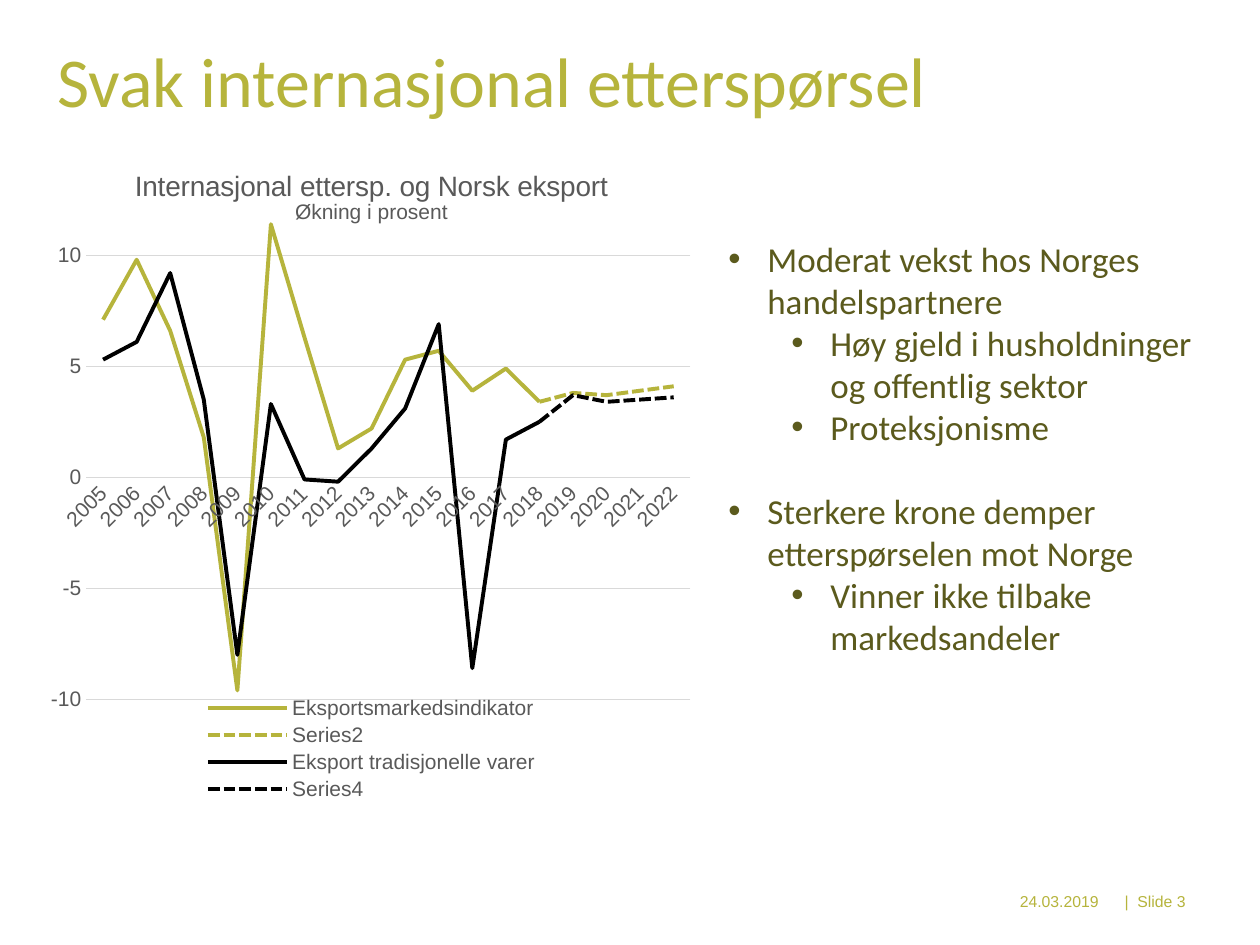
import pptx
import pptx.util
import pptx.chart.data
import pptx.dml.color
import pptx.enum.chart
import pptx.enum.dml
import pptx.enum.text
import pptx.oxml
import pptx.oxml.ns

Pt = pptx.util.Pt
RGB = pptx.dml.color.RGBColor
qn = pptx.oxml.ns.qn
ALIGN = pptx.enum.text.PP_ALIGN
ANCHOR = pptx.enum.text.MSO_ANCHOR

PX = 914400 / 126
OLIVE = RGB(0xB6, 0xB4, 0x3C)
DARK_OLIVE = RGB(0x5B, 0x5A, 0x1D)
GREY = RGB(0x59, 0x59, 0x59)
LIGHT_GREY = RGB(0xD9, 0xD9, 0xD9)
BLACK = RGB(0, 0, 0)

YEARS = [str(year) for year in range(2005, 2023)]
# Name, colour, index of first year, values, forecast (dashed)
SERIES = [
    ("Eksportsmarkedsindikator", OLIVE, 0,
     [7.1, 9.8, 6.6, 1.8, -9.6, 11.4, 6.3, 1.3, 2.2, 5.3, 5.7, 3.9, 4.9, 3.4], False),
    ("Series2", OLIVE, 13, [3.4, 3.8, 3.7, 3.9, 4.1], True),
    ("Eksport tradisjonelle varer", BLACK, 0,
     [5.3, 6.1, 9.2, 3.5, -8, 3.3, -0.1, -0.2, 1.3, 3.1, 6.9, -8.6, 1.7, 2.5], False),
    ("Series4", BLACK, 13, [2.5, 3.7, 3.4, 3.5, 3.6], True),
]
# Level, text, space before in points
BULLETS = [
    (0, "Moderat vekst hos Norges handelspartnere", 0),
    (1, "Høy gjeld i husholdninger og offentlig sektor", 0),
    (1, "Proteksjonisme", 0),
    (0, "Sterkere krone demper etterspørselen mot Norge", 24),
    (1, "Vinner ikke tilbake markedsandeler", 0),
]


def emu(px):
    return pptx.util.Emu(round(px * PX))


def place(box):
    return [emu(value) for value in box]


def set_font(font, name, size, colour):
    font.name = name
    font.size = Pt(size)
    font.bold = False
    font.color.rgb = colour


def add_title(page, box, text):
    title = page.shapes.title
    title.left, title.top, title.width, title.height = place(box)
    frame = title.text_frame
    frame.text = text
    frame.vertical_anchor = ANCHOR.MIDDLE
    para = frame.paragraphs[0]
    para.alignment = ALIGN.LEFT
    para.line_spacing = 0.9
    set_font(para.font, "Calibri", 40, OLIVE)


def add_footer(page, box, text):
    frame = page.shapes.add_textbox(*place(box)).text_frame
    frame.word_wrap = True
    frame.vertical_anchor = ANCHOR.MIDDLE
    frame.text = text
    para = frame.paragraphs[0]
    para.alignment = ALIGN.RIGHT
    set_font(para.font, "Arial", 9, OLIVE)


def add_bullets(page, box):
    frame = page.shapes.add_textbox(*place(box)).text_frame
    frame.word_wrap = True
    for index, (level, text, gap) in enumerate(BULLETS):
        para = frame.paragraphs[0] if index == 0 else frame.add_paragraph()
        para.text = text
        para.level = level
        if gap:
            para.space_before = Pt(gap)
        properties = para._p.get_or_add_pPr()
        properties.set("marL", str(emu(39 + 63 * level)))
        properties.set("indent", str(emu(-39)))
        bullet_font = pptx.oxml.parse_xml(
            f'<a:buFont {pptx.oxml.ns.nsdecls("a")} typeface="Arial"/>')
        bullet = pptx.oxml.parse_xml(f'<a:buChar {pptx.oxml.ns.nsdecls("a")} char="•"/>')
        properties.extend([bullet_font, bullet])
        set_font(para.font, "Calibri", 20, DARK_OLIVE)


def set_layout(element, position, inner, x, y, w, h):
    """Give a chart part a fixed place, in fractions of the chart."""
    old = element.find(qn("c:layout"))
    if old is not None:
        element.remove(old)
    target = '<c:layoutTarget val="inner"/>' if inner else ""
    element.insert(position, pptx.oxml.parse_xml(
        f'<c:layout {pptx.oxml.ns.nsdecls("c")}><c:manualLayout>{target}'
        '<c:xMode val="edge"/><c:yMode val="edge"/>'
        f'<c:x val="{x}"/><c:y val="{y}"/><c:w val="{w}"/><c:h val="{h}"/>'
        '</c:manualLayout></c:layout>'))


def format_axes(chart):
    for axis in (chart.category_axis, chart.value_axis):
        axis.major_tick_mark = pptx.enum.chart.XL_TICK_MARK.NONE
        axis.minor_tick_mark = pptx.enum.chart.XL_TICK_MARK.NONE
        set_font(axis.tick_labels.font, "Arial", 12, GREY)

    years = chart.category_axis
    years.format.line.color.rgb = LIGHT_GREY
    years.format.line.width = Pt(0.75)
    body = years._element.find(qn("c:txPr")).find(qn("a:bodyPr"))
    body.set("rot", "-2700000")
    body.set("vert", "horz")

    percent = chart.value_axis
    percent.minimum_scale, percent.maximum_scale, percent.major_unit = -10, 12, 5
    percent.tick_labels.number_format = "0"
    percent.tick_labels.number_format_is_linked = False
    percent.format.line.fill.background()
    percent.major_gridlines.format.line.color.rgb = LIGHT_GREY
    percent.major_gridlines.format.line.width = Pt(0.75)


def add_export_chart(page, box):
    data = pptx.chart.data.CategoryChartData(number_format="0.0")
    data.categories = YEARS
    for name, _, start, values, _ in SERIES:
        after = len(YEARS) - start - len(values)
        data.add_series(name, [None] * start + values + [None] * after)
    chart = page.shapes.add_chart(
        pptx.enum.chart.XL_CHART_TYPE.LINE, *place(box), data).chart
    set_font(chart.font, "Arial", 12, BLACK)

    # Two-line title
    chart.has_title = True
    frame = chart.chart_title.text_frame
    frame.text = "Internasjonal ettersp. og Norsk eksport"
    frame.add_paragraph().text = "Økning i prosent"
    for para, size in zip(frame.paragraphs, (16, 12)):
        set_font(para.font, "Arial", size, GREY)
        set_font(para.runs[0].font, "Arial", size, GREY)

    format_axes(chart)

    # Lines
    plot = chart.plots[0]
    plot.vary_by_categories = False
    for series, (_, colour, _, _, forecast) in zip(plot.series, SERIES):
        series.smooth = False
        series.marker.style = pptx.enum.chart.XL_MARKER_STYLE.NONE
        line = series.format.line
        line.color.rgb = colour
        line.width = Pt(2.25)
        if forecast:
            line.dash_style = pptx.enum.dml.MSO_LINE.SQUARE_DOT

    # Legend in one column below the plot
    chart.has_legend = True
    legend = chart.legend
    legend.position = pptx.enum.chart.XL_LEGEND_POSITION.BOTTOM
    legend.include_in_layout = False
    set_font(legend.font, "Arial", 12, GREY)
    set_layout(legend._element, 1, False, 0.25, 0.83, 0.5, 0.17)
    plot_area = chart._chartSpace.chart.plotArea
    set_layout(plot_area, 0, True, 0.08, 0.1, 0.89, 0.74)


def main():
    deck = pptx.Presentation()
    deck.slide_width, deck.slide_height = emu(1260), emu(945)
    page = deck.slides.add_slide(deck.slide_layouts[5])
    add_title(page, (45, 34, 1169, 102), "Svak internasjonal etterspørsel")
    add_footer(page, (965, 885, 146, 32), "24.03.2019")
    add_footer(page, (1084, 885, 114, 32), "|  Slide 3")
    add_bullets(page, (716, 231, 530, 437))
    add_export_chart(page, (32, 145, 679, 660))
    deck.save("out.pptx")


if __name__ == "__main__":
    main()
